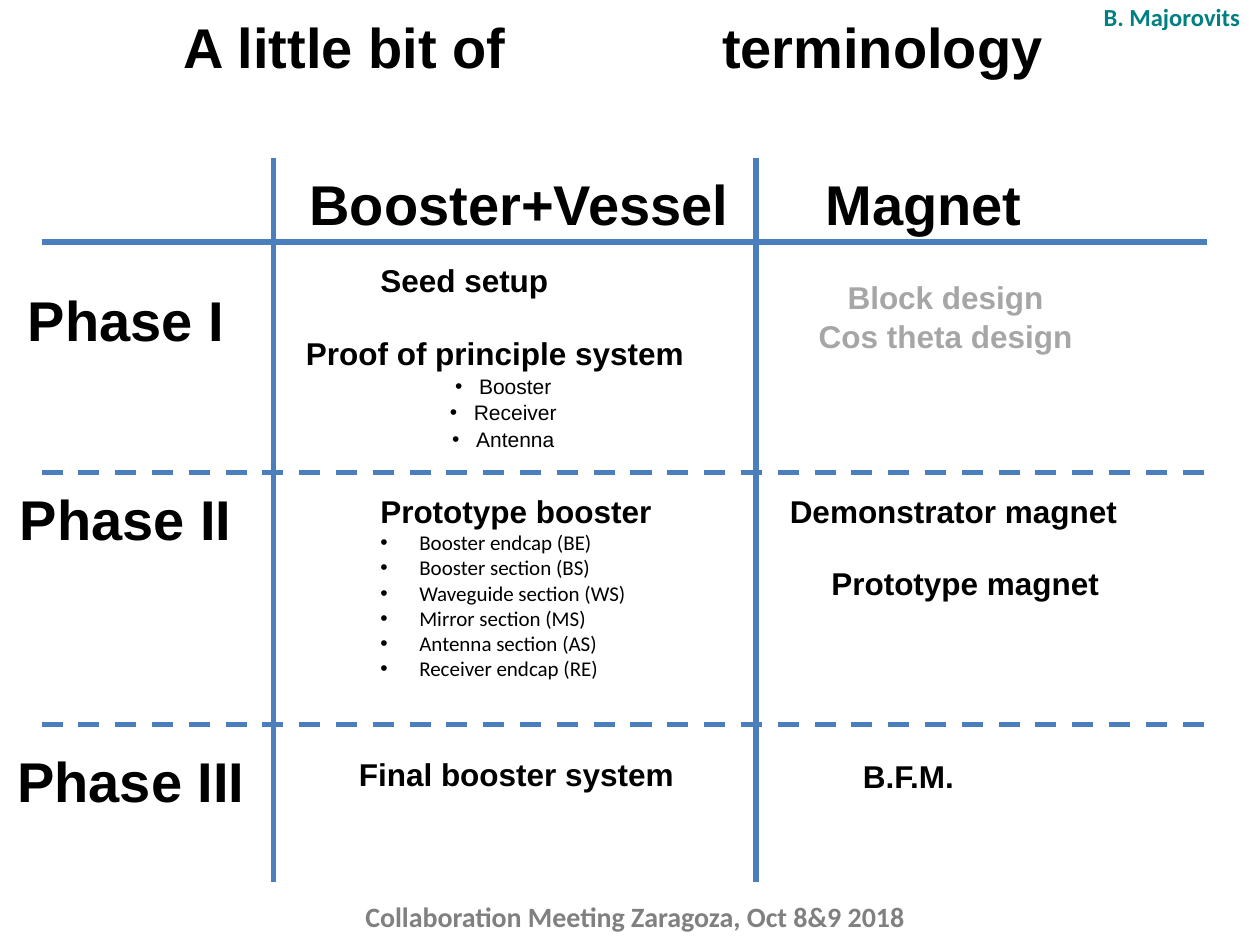
from lxml import etree
from pptx import Presentation
from pptx.dml.color import RGBColor
from pptx.enum.dml import MSO_LINE
from pptx.enum.shapes import MSO_CONNECTOR
from pptx.enum.text import PP_ALIGN
from pptx.oxml.ns import qn
from pptx.util import Inches, Pt

LEFT, CENTER = PP_ALIGN.LEFT, PP_ALIGN.CENTER
DASH, STRAIGHT = MSO_LINE.DASH, MSO_CONNECTOR.STRAIGHT

W, H = 10, 7.5
COLS = [0, 2.17, 6, 9.58]           # left edges of the columns, then the right end
ROWS = [1.25, 1.92, 3.75, 5.75, 7]  # top edges of the rows, then the bottom end
RULE_LEFT = 0.33
COLORS = {"text": "000000", "muted": "A6A6A6", "footer": "808080",
          "author": "008080", "rule": "4B7EBC"}

HEADING = {"size": 32, "bold": True, "name": "Arial", "color": "text"}
ITEM = {**HEADING, "size": 18}
MUTED = {**ITEM, "color": "muted"}
PART = {**ITEM, "size": 12, "bold": False}
SECTION = {**PART, "name": "Calibri"}
AUTHOR = {**ITEM, "size": 14, "name": "Calibri", "color": "author"}
FOOTER = {**AUTHOR, "size": 16, "color": "footer"}

HEADINGS = [  # column, row, offset and size in the cell, text
    (1, 0, (0.16, 0, 3.58, 0.83), "Booster+Vessel"),
    (2, 0, (0.33, 0, 2, 0.83), "Magnet"),
    (0, 1, (0, 0.25, 2, 0.83), "Phase I"),
    (0, 2, (0, 0, 2, 0.83), "Phase II"),
    (0, 3, (0, 0.08, 2.08, 0.83), "Phase III"),
]
ITEMS = [
    (1, 1, (0.75, 0.08, 1.67, 0.4), "Seed setup"),
    (1, 3, (0.58, 0.17, 3.17, 0.4), "Final booster system"),
    (2, 2, (0.17, 0.08, 3.17, 0.4), "Demonstrator magnet"),
    (2, 2, (0.5, 0.65, 3.17, 0.4), "Prototype magnet"),
    (2, 3, (0.75, 0.18, 3.17, 0.4), "B.F.M."),
]
PARTS = ["Booster", "Receiver", "Antenna"]
SECTIONS = ["Booster endcap (BE)", "Booster section (BS)", "Waveguide section (WS)",
            "Mirror section (MS)", "Antenna section (AS)", "Receiver endcap (RE)"]


def rgb(name):
    return RGBColor.from_string(COLORS[name])


def cell_box(col, row, offset):
    dx, dy, w, h = offset
    return COLS[col] + dx, ROWS[row] + dy, w, h


def set_indent(p, left, hanging=0):
    """Indent a paragraph; a hanging first line gets a bullet."""
    pPr = p._p.get_or_add_pPr()
    pPr.set("marL", str(Inches(left)))
    pPr.set("indent", str(-Inches(hanging)))
    if hanging:
        etree.SubElement(pPr, qn("a:buFont")).set("typeface", "Arial")
        etree.SubElement(pPr, qn("a:buChar")).set("char", "•")


def add_text(slide, box, lines, top=0.06):
    """Fill a text box from (text, format, alignment, indent) lines."""
    tf = slide.shapes.add_textbox(*map(Inches, box)).text_frame
    tf.word_wrap = True
    tf.margin_top = Inches(top)
    for i, (text, fmt, align, indent) in enumerate(lines):
        p = tf.paragraphs[0] if i == 0 else tf.add_paragraph()
        p.alignment = align
        p.line_spacing = 1.05 if fmt["name"] == "Arial" else 1.0
        if indent:
            set_indent(p, *indent)
        r = p.add_run()
        r.text = text
        for key, value in fmt.items():
            if key == "color":
                r.font.color.rgb = rgb(value)
            else:
                setattr(r.font, key, Pt(value) if key == "size" else value)
    return tf


def add_rule(slide, x1, y1, x2, y2, dash=None):
    line = slide.shapes.add_connector(STRAIGHT, *map(Inches, (x1, y1, x2, y2)))
    line.line.color.rgb = rgb("rule")
    line.line.width = Pt(3)
    if dash:
        line.line.dash_style = dash
    etree.SubElement(line._element.spPr, qn("a:effectLst"))


def add_title(slide, box):
    """Set the title in two halves parted by a tab stop."""
    tf = add_text(slide, box, [("A little bit of\tterminology", HEADING, LEFT, None)], 0.07)
    tf.margin_left = Inches(1.29)
    pPr = tf.paragraphs[0]._p.get_or_add_pPr()
    tab = etree.SubElement(etree.SubElement(pPr, qn("a:tabLst")), qn("a:tab"))
    tab.set("pos", str(Inches(4.27)))
    tab.set("algn", "l")


def add_margins(slide):
    add_text(slide, (8.09, -0.03, 2.42, 0.33),
             [("B. Majorovits", AUTHOR, CENTER, None)], 0.05)
    add_text(slide, (2.33, 7.09, 5.42, 0.37),
             [("Collaboration Meeting Zaragoza, Oct 8&9 2018", FOOTER, CENTER, None)], 0.05)


def add_cells(slide):
    for col, row, offset, text in HEADINGS:
        add_text(slide, cell_box(col, row, offset), [(text, HEADING, CENTER, None)], 0.07)
    for col, row, offset, text in ITEMS:
        add_text(slide, cell_box(col, row, offset), [(text, ITEM, LEFT, None)])
    add_text(slide, cell_box(1, 1, (0.16, 0.66, 3.33, 1.41)),
             [("Proof of principle system", ITEM, LEFT, None)]
             + [(part, PART, CENTER, (0.19, 0.19)) for part in PARTS])
    add_text(slide, cell_box(1, 2, (0.25, 0.08, 3.17, 1.92)),
             [("Prototype booster", ITEM, LEFT, (0.5,))]
             + [(section, SECTION, LEFT, (0.81, 0.31)) for section in SECTIONS])
    add_text(slide, cell_box(2, 1, (-0.08, 0.21, 3.17, 0.71)),
             [(text, MUTED, CENTER, None) for text in ("Block design", "Cos theta design")])


def add_rules(slide):
    for y, dash in zip(ROWS[1:-1], (None, DASH, DASH)):
        add_rule(slide, RULE_LEFT, y, COLS[-1], y, dash)
    for x in COLS[1:-1]:
        add_rule(slide, x, ROWS[0], x, ROWS[-1])


def main():
    prs = Presentation()
    prs.slide_width, prs.slide_height = Inches(W), Inches(H)
    slide = prs.slides.add_slide(prs.slide_layouts[6])
    add_margins(slide)
    add_cells(slide)
    add_title(slide, (0.17, 0, 9.42, 0.83))
    add_rules(slide)
    prs.save("out.pptx")


if __name__ == "__main__":
    main()
